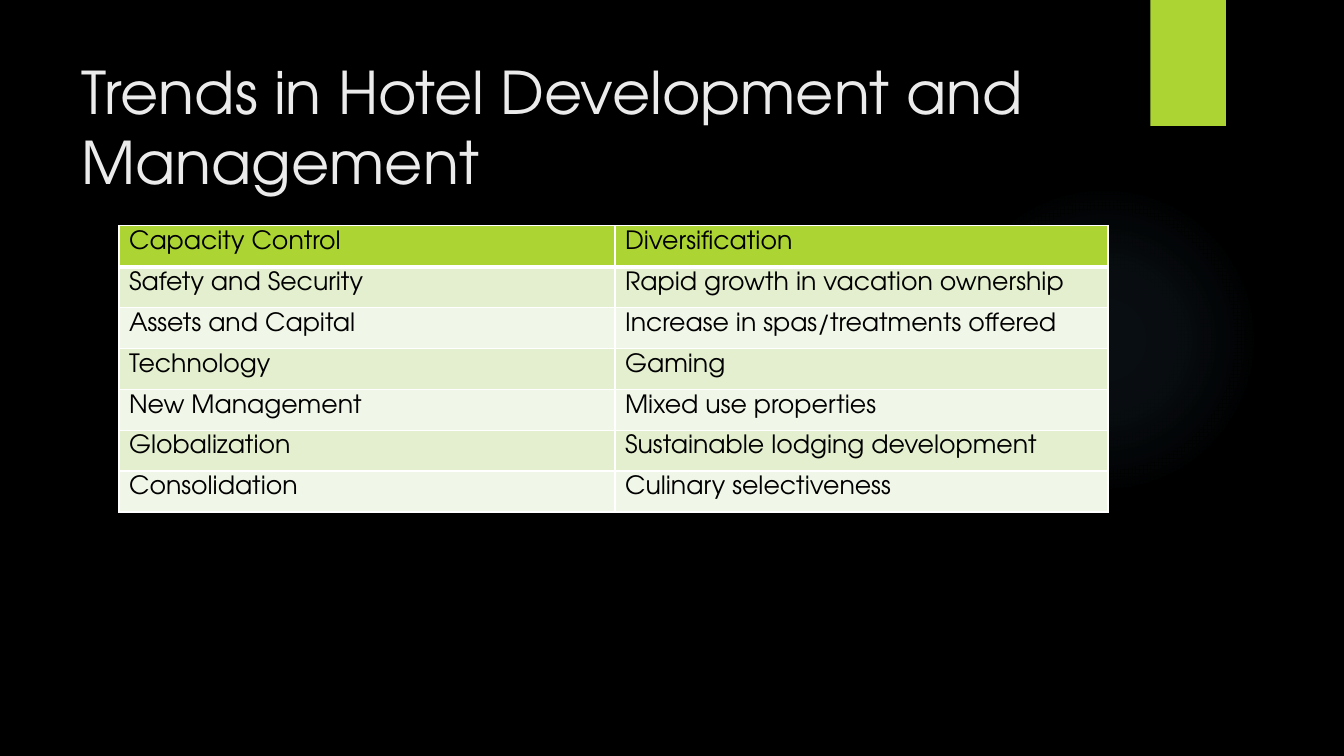
import lxml.etree
import pptx
import pptx.dml.color
import pptx.enum.shapes
import pptx.enum.text
import pptx.oxml
import pptx.oxml.ns
import pptx.util

Inches, Pt = pptx.util.Inches, pptx.util.Pt

TITLE = "Trends in Hotel Development and Management"
TRENDS = [
    ("Capacity Control", "Diversification"),
    ("Safety and Security", "Rapid growth in vacation ownership"),
    ("Assets and Capital", "Increase in spas/treatments offered"),
    ("Technology", "Gaming"),
    ("New Management", "Mixed use properties"),
    ("Globalization", "Sustainable lodging development"),
    ("Consolidation", "Culinary selectiveness"),
]
COLUMN_WIDTHS = (4.92, 4.89)
FONT = "TeX Gyre Adventor"
COLORS = {
    "background": "000000",
    "title": "EBEBEB",
    "accent": "ACD433",
    "band_dark": "E3EFCE",
    "band_light": "F1F7E8",
    "cell_text": "000000",
    "border": "FFFFFF",
    "glow": "7AC4F0",
}
GLOW_STOPS = [(0, 7), (36, 6), (69, 0)]  # position and opacity, in percent


def color(name):
    return pptx.dml.color.RGBColor.from_string(COLORS[name])


def paint(fill, name):
    fill.solid()
    fill.fore_color.rgb = color(name)


def style_text(frame, size, name):
    font = frame.paragraphs[0].font
    font.name, font.size, font.color.rgb = FONT, Pt(size), color(name)


def add_plain_shape(slide, kind, left, top, width, height):
    shape = slide.shapes.add_shape(
        kind, Inches(left), Inches(top), Inches(width), Inches(height))
    shape.shadow.inherit = False
    shape.line.fill.background()
    return shape


def fill_with_glow(shape):
    """Give the shape a radial gradient that fades out from its centre."""
    stops = "".join(
        f'<a:gs pos="{position * 1000}"><a:srgbClr val="{COLORS["glow"]}">'
        f'<a:alpha val="{opacity * 1000}"/></a:srgbClr></a:gs>'
        for position, opacity in GLOW_STOPS)
    gradient = pptx.oxml.parse_xml(
        f'<a:gradFill {pptx.oxml.ns.nsdecls("a")} rotWithShape="1">'
        f'<a:gsLst>{stops}</a:gsLst><a:path path="circle">'
        '<a:fillToRect l="50000" t="50000" r="50000" b="50000"/>'
        '</a:path></a:gradFill>')
    shape.fill.solid()
    solid = shape.element.spPr.find(pptx.oxml.ns.qn("a:solidFill"))
    solid.getparent().replace(solid, gradient)


def set_borders(cell, top, bottom):
    """Draw the four cell borders; top and bottom widths are in points."""
    properties = cell._tc.get_or_add_tcPr()
    sides = {"lnL": 1, "lnR": 1, "lnT": top, "lnB": bottom}
    for index, (side, width) in enumerate(sides.items()):
        properties.insert(index, pptx.oxml.parse_xml(
            f'<a:{side} {pptx.oxml.ns.nsdecls("a")} w="{Pt(width)}">'
            f'<a:solidFill><a:srgbClr val="{COLORS["border"]}"/></a:solidFill>'
            f'</a:{side}>'))


def add_trends(slide):
    table = slide.shapes.add_table(
        len(TRENDS), len(COLUMN_WIDTHS), Inches(1.18), Inches(2.24),
        Inches(sum(COLUMN_WIDTHS)), Inches(2.84)).table
    for column, width in zip(table.columns, COLUMN_WIDTHS):
        column.width = Inches(width)
    for row, trends in enumerate(TRENDS):
        band = "band_dark" if row % 2 else "band_light"
        for column, trend in enumerate(trends):
            cell = table.cell(row, column)
            cell.text = trend
            cell.margin_top = cell.margin_bottom = Inches(0.05)
            style_text(cell.text_frame, 18, "cell_text")
            paint(cell.fill, band if row else "accent")
            set_borders(cell, top=3 if row == 1 else 1, bottom=1 if row else 3)


def main():
    deck = pptx.Presentation()
    deck.slide_width, deck.slide_height = Inches(13.33), Inches(7.5)
    slide = deck.slides.add_slide(deck.slide_layouts[5])
    paint(slide.background.fill, "background")

    shapes = pptx.enum.shapes.MSO_SHAPE
    glow = add_plain_shape(slide, shapes.OVAL, 9.41, 1.83, 3.08, 3.08)
    fill_with_glow(glow)
    tab = add_plain_shape(slide, shapes.RECTANGLE, 11.41, 0, 0.75, 1.25)
    paint(tab.fill, "accent")

    title = slide.shapes.title
    title.left, title.top = Inches(0.71), Inches(0.5)
    title.width, title.height = Inches(10.29), Inches(1.07)
    title.text = TITLE
    frame = title.text_frame
    frame.word_wrap = True
    frame.auto_size = pptx.enum.text.MSO_AUTO_SIZE.NONE
    frame.vertical_anchor = pptx.enum.text.MSO_ANCHOR.TOP
    frame.paragraphs[0].alignment = pptx.enum.text.PP_ALIGN.LEFT
    style_text(frame, 42, "title")

    add_trends(slide)
    deck.save("out.pptx")


if __name__ == "__main__":
    main()
